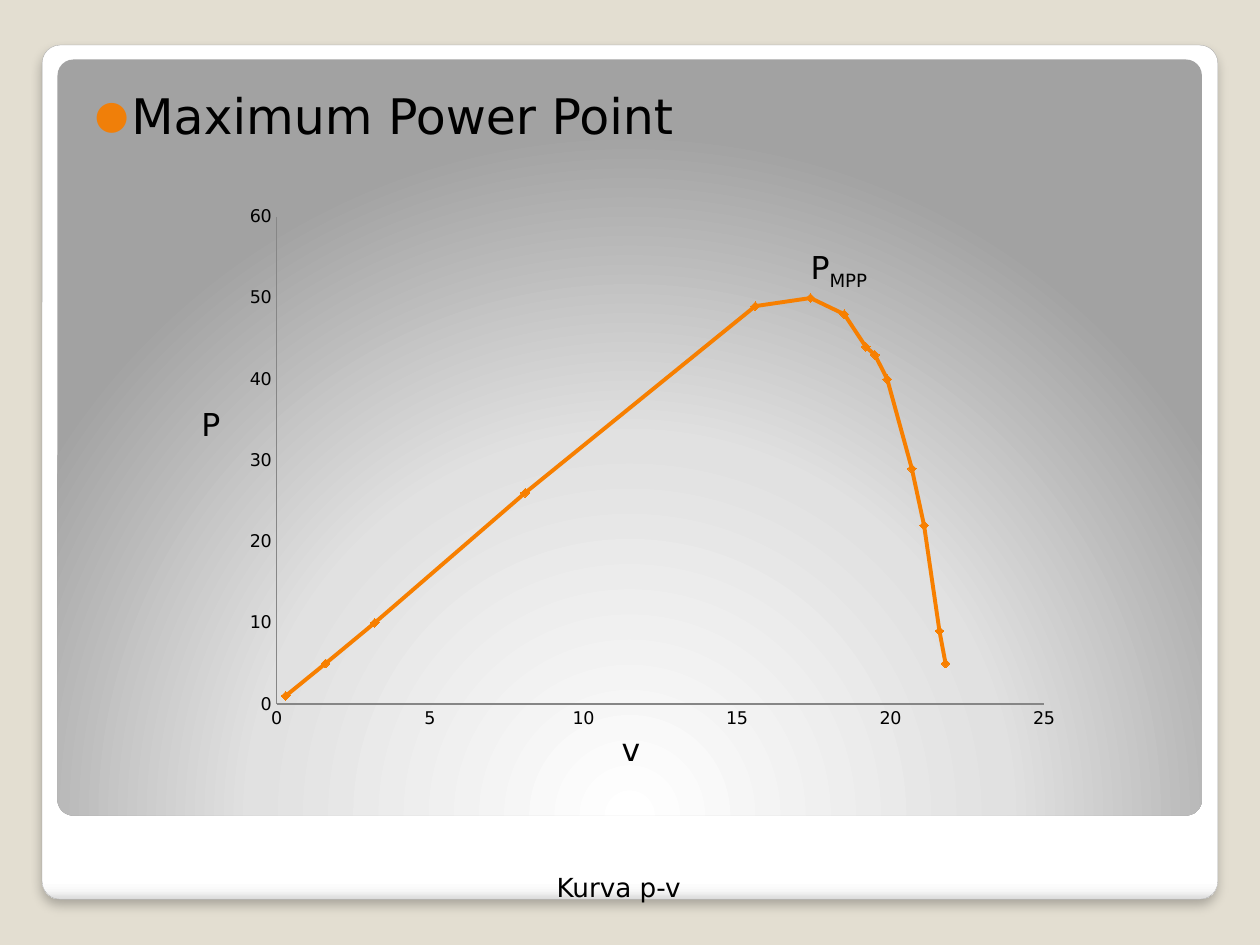
from dataclasses import dataclass

from lxml.etree import SubElement
from pptx import Presentation
from pptx.chart.data import XyChartData
from pptx.dml.color import RGBColor
from pptx.enum.chart import XL_CHART_TYPE, XL_MARKER_STYLE, XL_TICK_MARK
from pptx.enum.shapes import MSO_SHAPE
from pptx.oxml import parse_xml
from pptx.oxml.ns import nsdecls, qn
from pptx.util import Cm, Pt


@dataclass(frozen=True)
class Theme:
    font: str = "DejaVu Sans"
    ground: str = "E3DED1"
    ink: str = "000000"
    accent: str = "F07F09"
    curve: str = "F77F00"
    edge: str = "A4A4A4"
    axis: str = "868686"
    title: int = 28
    label: int = 18
    note: int = 15
    tick: int = 10


@dataclass(frozen=True)
class Box:
    left: float
    top: float
    width: float
    height: float

    def place(self) -> tuple:
        return Cm(self.left), Cm(self.top), Cm(self.width), Cm(self.height)


@dataclass(frozen=True)
class Label:
    box: Box
    text: str
    size: int
    sub: str = ""


@dataclass(frozen=True)
class Panel:
    box: Box
    stops: tuple
    shade: str


THEME = Theme()

PANELS = (
    Panel(Box(0.85, 0.91, 23.7, 17.22),
          ((0, "FFFFFF"), (98, "FFFFFF"), (99, "F7F7F7"), (100, "DADADA")),
          '<a:lin ang="5400000" scaled="0"/>'),
    Panel(Box(1.16, 1.2, 23.07, 15.24),
          ((0, "FFFFFF"), (55, "E1E1E1"), (100, "A2A2A2")),
          '<a:path path="circle"><a:fillToRect l="50000" t="175000" '
          'r="50000" b="-75000"/></a:path>'),
)

LABELS = (
    Label(Box(3.81, 8.04, 0.85, 1.06), "P", THEME.label),
    Label(Box(12.28, 14.6, 1.27, 1.02), "v", THEME.label),
    Label(Box(16.09, 4.87, 2.33, 1.02), "P", THEME.label, "MPP"),
    Label(Box(10.97, 17.44, 3.2, 0.9), "Kurva p-v", THEME.note),
)

POINTS = ((0.3, 1), (1.6, 5), (3.2, 10), (8.1, 26), (15.6, 49),
          (17.4, 50), (18.5, 48), (19.2, 44), (19.5, 43), (19.9, 40),
          (20.7, 29), (21.1, 22), (21.6, 9), (21.8, 5))


def tint(code: str) -> RGBColor:
    return RGBColor.from_string(code)


def add_panel(slide, panel: Panel):
    shape = slide.shapes.add_shape(MSO_SHAPE.ROUNDED_RECTANGLE,
                                   *panel.box.place())
    shape.adjustments[0] = 0.021
    shape.shadow.inherit = False
    shape.line.fill.background()
    stops = "".join(f'<a:gs pos="{pos * 1000}"><a:srgbClr val="{code}"/></a:gs>'
                    for pos, code in panel.stops)
    grad = parse_xml(f'<a:gradFill {nsdecls("a")} rotWithShape="1">'
                     f'<a:gsLst>{stops}</a:gsLst>{panel.shade}</a:gradFill>')
    shape._element.spPr.find(qn("a:prstGeom")).addnext(grad)
    return shape


def add_shade(shape) -> None:
    parts = shape._element.spPr.find(qn("a:effectLst"))
    drop = SubElement(parts, qn("a:outerShdw"), blurRad=str(Pt(6)),
                      dist=str(Pt(4)), dir="5400000", algn="t")
    color = SubElement(drop, qn("a:srgbClr"), val=THEME.ink)
    SubElement(color, qn("a:alpha"), val="25000")


def add_run(para, text: str, size: int):
    run = para.add_run()
    run.text = text
    run.font.name = THEME.font
    run.font.size = Pt(size)
    run.font.color.rgb = tint(THEME.ink)
    return run


def add_label(slide, label: Label) -> None:
    frame = slide.shapes.add_textbox(*label.box.place()).text_frame
    frame.word_wrap = True
    para = frame.paragraphs[0]
    add_run(para, label.text, label.size)
    if label.sub:
        run = add_run(para, label.sub, label.size)
        run._r.get_or_add_rPr().set("baseline", "-25000")


def add_title(slide, box: Box, text: str) -> None:
    frame = slide.shapes.add_textbox(*box.place()).text_frame
    frame.word_wrap = True
    frame.margin_left, frame.margin_top = Cm(0.51), Cm(0.25)
    para = frame.paragraphs[0]
    props = para._p.get_or_add_pPr()
    props.set("marL", str(Cm(0.74)))
    props.set("indent", str(Cm(-0.74)))
    color = SubElement(props, qn("a:buClr"))
    SubElement(color, qn("a:srgbClr"), val=THEME.accent)
    SubElement(props, qn("a:buSzPct"), val="80000")
    SubElement(props, qn("a:buFont"), typeface=THEME.font)
    SubElement(props, qn("a:buChar"), char="●")
    add_run(para, text, THEME.title)


def set_axis(axis, top: int, step: int) -> None:
    axis.minimum_scale, axis.maximum_scale = 0, top
    axis.major_unit = step
    axis.has_major_gridlines = False
    axis.major_tick_mark = axis.minor_tick_mark = XL_TICK_MARK.NONE
    axis.format.line.color.rgb = tint(THEME.axis)
    axis.format.line.width = Pt(0.75)


def add_curve(slide, box: Box) -> None:
    data = XyChartData()
    points = data.add_series("Series 1")
    for volt, power in POINTS:
        points.add_data_point(volt, power)
    chart = slide.shapes.add_chart(XL_CHART_TYPE.XY_SCATTER_SMOOTH,
                                   *box.place(), data).chart
    chart.has_legend = chart.has_title = False
    chart.font.name = THEME.font
    chart.font.size = Pt(THEME.tick)
    chart.font.color.rgb = tint(THEME.ink)
    chart.plots[0].vary_by_categories = False
    set_axis(chart.category_axis, 25, 5)
    set_axis(chart.value_axis, 60, 10)

    # Line and markers
    line = chart.plots[0].series[0]
    line.smooth = True
    line.format.line.color.rgb = tint(THEME.curve)
    line.format.line.width = Pt(2.25)
    line.marker.style = XL_MARKER_STYLE.DIAMOND
    line.marker.size = 5
    line.marker.format.fill.solid()
    line.marker.format.fill.fore_color.rgb = tint(THEME.curve)
    line.marker.format.line.color.rgb = tint(THEME.curve)

    # Fixed inner plot area
    area = chart._chartSpace.chart.plotArea
    for old in area.findall(qn("c:layout")):
        area.remove(old)
    rules = (("layoutTarget", "inner"), ("xMode", "edge"), ("yMode", "edge"),
             ("x", 0.12), ("y", 0.08), ("w", 0.85), ("h", 0.8))
    marks = "".join(f'<c:{name} val="{val}"/>' for name, val in rules)
    area.insert(0, parse_xml(f'<c:layout {nsdecls("c")}><c:manualLayout>'
                             f'{marks}</c:manualLayout></c:layout>'))


def main() -> None:
    deck = Presentation()
    deck.slide_width, deck.slide_height = Cm(25.4), Cm(19.05)
    slide = deck.slides.add_slide(deck.slide_layouts[6])

    # Ground and panels
    slide.background.fill.solid()
    slide.background.fill.fore_color.rgb = tint(THEME.ground)
    outer, _ = [add_panel(slide, panel) for panel in PANELS]
    outer.line.color.rgb = tint(THEME.edge)
    outer.line.width = Pt(0.16)
    add_shade(outer)

    # Title, curve and labels
    add_title(slide, Box(1.4, 1.48, 22.73, 1.9), "Maximum Power Point")
    add_curve(slide, Box(3.39, 3.39, 18.2, 12.28))
    for label in LABELS:
        add_label(slide, label)

    deck.save("out.pptx")


if __name__ == "__main__":
    main()
